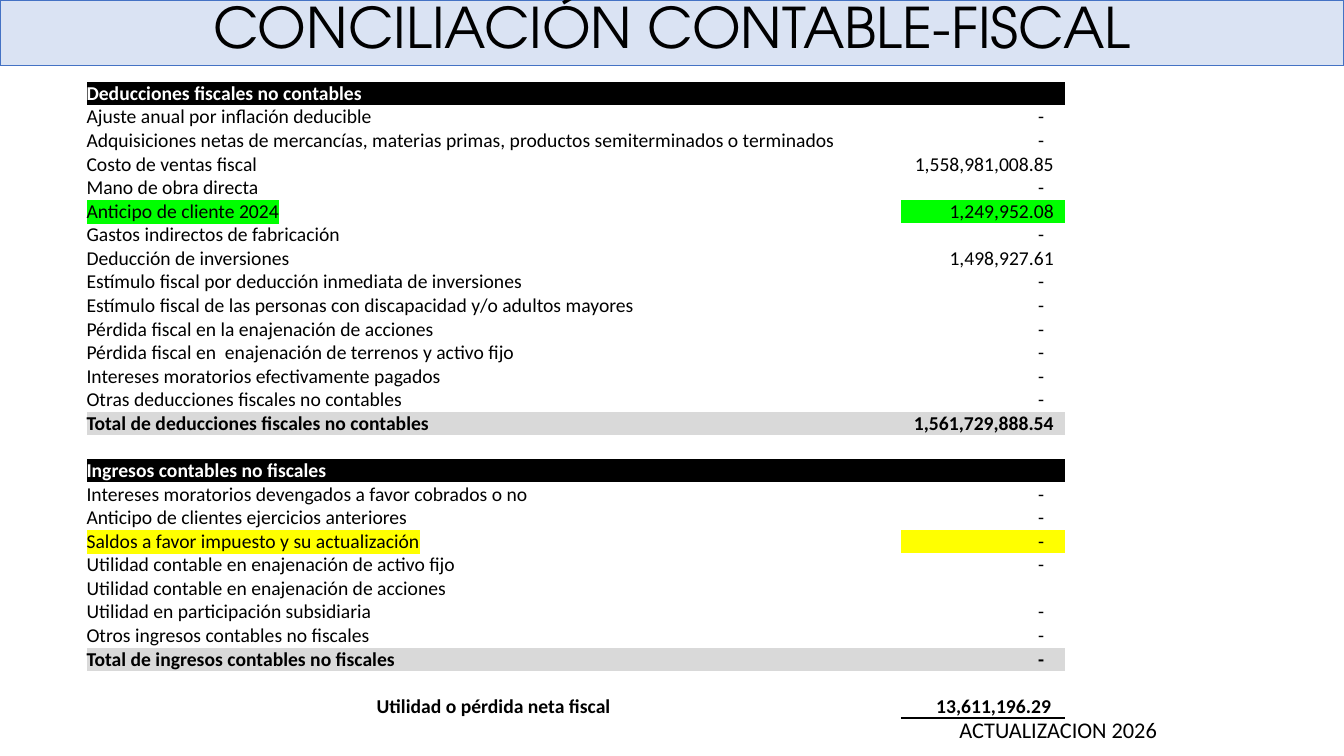
from dataclasses import dataclass
from lxml.etree import SubElement
from pptx import Presentation
from pptx.dml.color import RGBColor as Rgb
from pptx.enum.shapes import MSO_SHAPE as Shape
from pptx.enum.text import MSO_ANCHOR as Anchor, PP_ALIGN as Align
from pptx.oxml import parse_xml
from pptx.oxml.ns import qn
from pptx.util import Cm, Pt


@dataclass(frozen=True)
class Theme:
    """Hold the colours, fonts and type sizes."""
    black: str = "000000"
    white: str = "FFFFFF"
    gray: str = "D9D9D9"
    pale: str = "DAE3F3"
    blue: str = "4472C4"
    green: str = "00FF00"
    yellow: str = "FFFF00"
    head: str = "TeX Gyre Adventor"
    body: str = "Calibri"
    title: int = 40
    note: int = 16
    cell: int = 14


LOOK = Theme()
NS = 'xmlns:a="http://schemas.openxmlformats.org/drawingml/2006/main"'
PLAIN = "{2D5ABB26-0587-4C30-8999-92F81FD0307C}"

ROWS = [
    ("head", "Deducciones fiscales no contables", ""),
    ("item", "Ajuste anual por inflación deducible", "-"),
    ("item", "Adquisiciones netas de mercancías, materias primas, "
             "productos semiterminados o terminados", "-"),
    ("item", "Costo de ventas fiscal", "1,558,981,008.85"),
    ("item", "Mano de obra directa", "-"),
    ("green", "Anticipo de cliente 2024", "1,249,952.08"),
    ("item", "Gastos indirectos de fabricación", "-"),
    ("item", "Deducción de inversiones", "1,498,927.61"),
    ("item", "Estímulo fiscal por deducción inmediata de inversiones", "-"),
    ("item", "Estímulo fiscal de las personas con discapacidad y/o adultos mayores", "-"),
    ("item", "Pérdida fiscal en la enajenación de acciones", "-"),
    ("item", "Pérdida fiscal en  enajenación de terrenos y activo fijo", "-"),
    ("item", "Intereses moratorios efectivamente pagados", "-"),
    ("item", "Otras deducciones fiscales no contables", "-"),
    ("total", "Total de deducciones fiscales no contables", "1,561,729,888.54"),
    ("item", "", ""),
    ("head", "Ingresos contables no fiscales", ""),
    ("item", "Intereses moratorios devengados a favor cobrados o no", "-"),
    ("item", "Anticipo de clientes ejercicios anteriores", "-"),
    ("yellow", "Saldos a favor impuesto y su actualización", "-"),
    ("item", "Utilidad contable en enajenación de activo fijo", "-"),
    ("item", "Utilidad contable en enajenación de acciones", ""),
    ("item", "Utilidad en participación subsidiaria", "-"),
    ("item", "Otros ingresos contables no fiscales", "-"),
    ("total", "Total de ingresos contables no fiscales", "-"),
    ("item", "", ""),
    ("net", "Utilidad o pérdida neta fiscal", "13,611,196.29"),
]


def write(frame, text, size=LOOK.cell, font=LOOK.body, color=LOOK.black,
          bold=False, align=Align.LEFT, space=None, mark=None):
    """Write one formatted paragraph into a text frame."""
    para = frame.paragraphs[0]
    para.alignment = align
    if space:
        para.line_spacing = space
    if not text:
        SubElement(para._p, qn("a:endParaRPr"), sz=str(size * 100))
        return
    run = para.add_run()
    run.text = text
    run.font.size, run.font.bold = Pt(size), bold
    run.font.color.rgb = Rgb.from_string(color)
    if mark:
        tag = parse_xml(f'<a:highlight {NS}><a:srgbClr val="{mark}"/></a:highlight>')
        run._r.rPr.find(qn("a:solidFill")).addnext(tag)
    run.font.name = font


def banner(slide, x, y, w, h):
    """Draw the title bar across the box."""
    bar = slide.shapes.add_shape(Shape.RECTANGLE, Cm(x), Cm(y), Cm(w), Cm(h))
    bar.shadow.inherit = False
    bar.fill.solid()
    bar.fill.fore_color.rgb = Rgb.from_string(LOOK.pale)
    bar.line.color.rgb = Rgb.from_string(LOOK.blue)
    bar.line.width = Pt(1)
    frame = bar.text_frame
    frame.word_wrap = True
    frame.vertical_anchor = Anchor.BOTTOM
    write(frame, "CONCILIACIÓN CONTABLE-FISCAL", size=LOOK.title,
          font=LOOK.head, align=Align.CENTER, space=0.9)


def paint(cell, color):
    """Fill a cell, or leave it clear, and trim its margins."""
    cell.margin_left = cell.margin_right = cell.margin_top = cell.margin_bottom = 0
    cell.vertical_anchor = Anchor.BOTTOM
    if color:
        cell.fill.solid()
        cell.fill.fore_color.rgb = Rgb.from_string(color)
    else:
        cell.fill.background()


def rule(cell):
    """Draw a line under a cell."""
    line = parse_xml(f'<a:lnB {NS} w="{Pt(2)}"><a:solidFill>'
                     f'<a:srgbClr val="{LOOK.black}"/></a:solidFill></a:lnB>')
    cell._tc.get_or_add_tcPr().insert(0, line)


def ledger(slide, x, y, w, h):
    """Lay out the reconciliation table in the box."""
    table = slide.shapes.add_table(len(ROWS), 2, Cm(x), Cm(y), Cm(w), Cm(h)).table
    table.first_row = table.horz_banding = False
    table._tbl.tblPr.find(qn("a:tableStyleId")).text = PLAIN
    table.columns[0].width, table.columns[1].width = Cm(w - 4.14), Cm(4.14)
    fills = {"head": LOOK.black, "total": LOOK.gray}
    marks = {"green": LOOK.green, "yellow": LOOK.yellow}
    for i, (kind, label, value) in enumerate(ROWS):
        table.rows[i].height = Cm(h / len(ROWS))
        name, sum_ = table.cell(i, 0), table.cell(i, 1)
        fill, mark = fills.get(kind), marks.get(kind)
        paint(name, fill)
        paint(sum_, fill or mark)
        sum_.margin_right = Cm(0.53 if value == "-" else 0.28)
        bold = kind in ("head", "total", "net")
        write(name.text_frame, label, bold=bold, mark=mark,
              color=LOOK.white if kind == "head" else LOOK.black,
              align=Align.CENTER if kind == "net" else Align.LEFT)
        write(sum_.text_frame, value, bold=bold, align=Align.RIGHT)
        if kind == "net":
            sum_.margin_right = Cm(0.35)
            rule(sum_)


def footer(slide, x, y, w, h):
    """Place the update note in the box."""
    frame = slide.shapes.add_textbox(Cm(x), Cm(y), Cm(w), Cm(h)).text_frame
    frame.word_wrap = True
    write(frame, "ACTUALIZACION 2026", size=LOOK.note)


def main():
    """Build and save the slide."""
    deck = Presentation()
    deck.slide_width, deck.slide_height = Cm(33.87), Cm(19.05)
    slide = deck.slides.add_slide(deck.slide_layouts[6])
    banner(slide, 0, 0, 33.87, 1.65)
    footer(slide, 23.93, 17.91, 9.94, 0.94)
    ledger(slide, 2.18, 2.06, 24.66, 16)
    deck.save("out.pptx")


if __name__ == "__main__":
    main()
